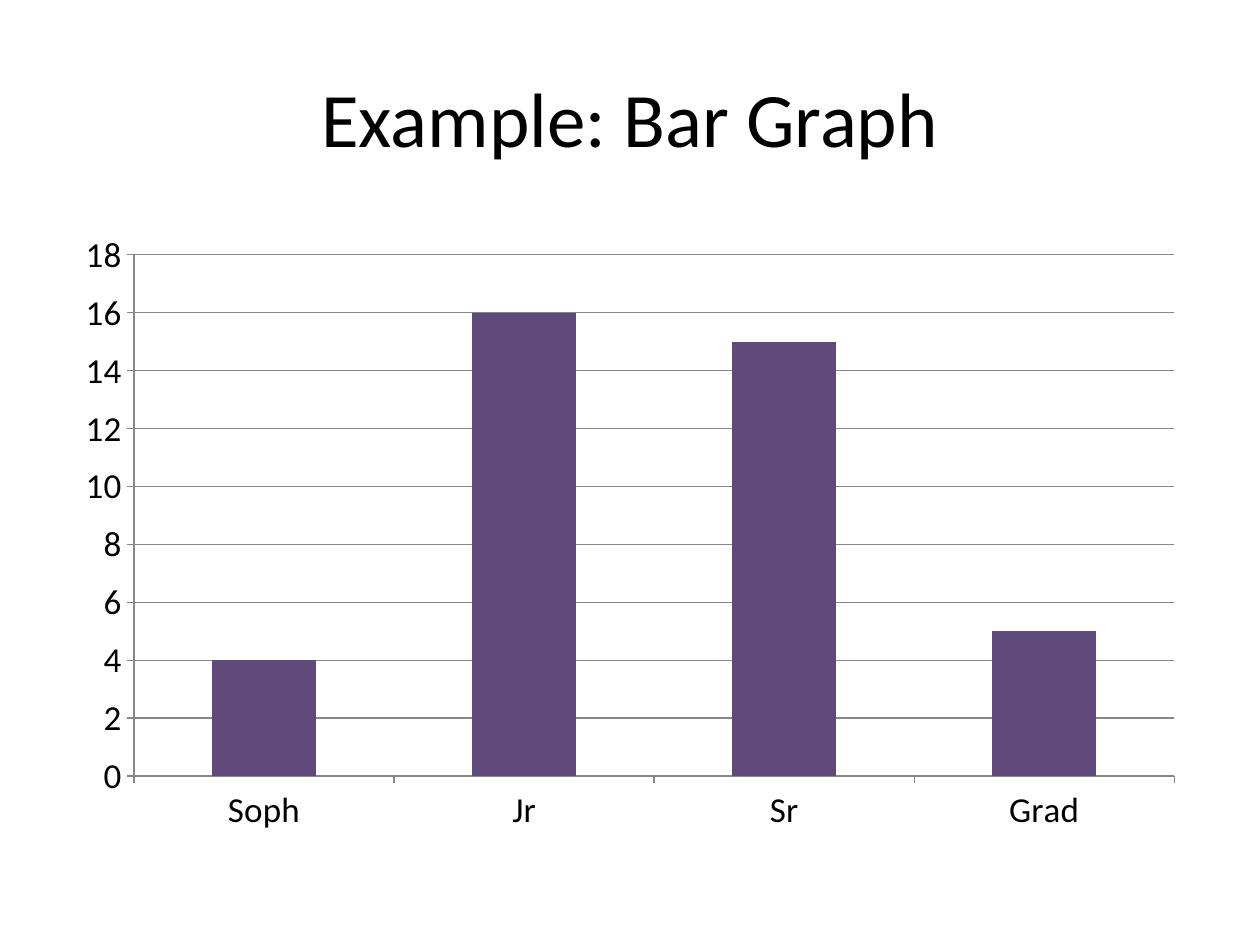
import pptx
import pptx.chart.data
import pptx.dml.color
import pptx.enum.chart
import pptx.enum.text
import pptx.util
from pptx.util import Cm


def color(hex_string):
    return pptx.dml.color.RGBColor.from_string(hex_string)


def format_font(font, size):
    values = {"name": "Calibri", "size": pptx.util.Pt(size), "bold": False}
    for attribute, value in values.items():
        setattr(font, attribute, value)
    font.color.rgb = color("000000")


presentation = pptx.Presentation()
presentation.slide_width = Cm(25.4)
presentation.slide_height = Cm(19.05)
slide = presentation.slides.add_slide(presentation.slide_layouts[5])

# Heading
heading = slide.shapes.title
heading_box = {"left": Cm(1.27), "top": Cm(0.76), "width": Cm(22.86), "height": Cm(3.18)}
for attribute, value in heading_box.items():
    setattr(heading, attribute, value)
heading.text_frame.text = "Example: Bar Graph"
heading.text_frame.vertical_anchor = pptx.enum.text.MSO_ANCHOR.MIDDLE
heading_line = heading.text_frame.paragraphs[0]
heading_line.alignment = pptx.enum.text.PP_ALIGN.CENTER
format_font(heading_line.runs[0].font, 44)

# Students per class year
class_counts = pptx.chart.data.CategoryChartData()
class_counts.categories = ["Soph", "Jr", "Sr", "Grad"]
class_counts.add_series("Series 1", [4, 16, 15, 5])
bar_graph = slide.shapes.add_chart(
    pptx.enum.chart.XL_CHART_TYPE.COLUMN_CLUSTERED,
    Cm(1.27), Cm(4.45), Cm(22.86), Cm(12.57), class_counts,
).chart
bar_graph.has_title = False
bar_graph.has_legend = False
format_font(bar_graph.font, 10)

bars = bar_graph.plots[0]
bars.gap_width = 150
bars.vary_by_categories = False
bars.series[0].format.fill.solid()
bars.series[0].format.fill.fore_color.rgb = color("604A7B")

years, counts = bar_graph.category_axis, bar_graph.value_axis
scale = {"minimum_scale": 0, "maximum_scale": 18, "major_unit": 2, "has_major_gridlines": True}
for attribute, value in scale.items():
    setattr(counts, attribute, value)
for axis in (years, counts):
    axis.major_tick_mark = pptx.enum.chart.XL_TICK_MARK.OUTSIDE
    axis.minor_tick_mark = pptx.enum.chart.XL_TICK_MARK.NONE
    format_font(axis.tick_labels.font, 20)
for ruled in (years, counts, counts.major_gridlines):
    ruled.format.line.color.rgb = color("878787")
    ruled.format.line.width = pptx.util.Pt(0.75)

presentation.save("out.pptx")
